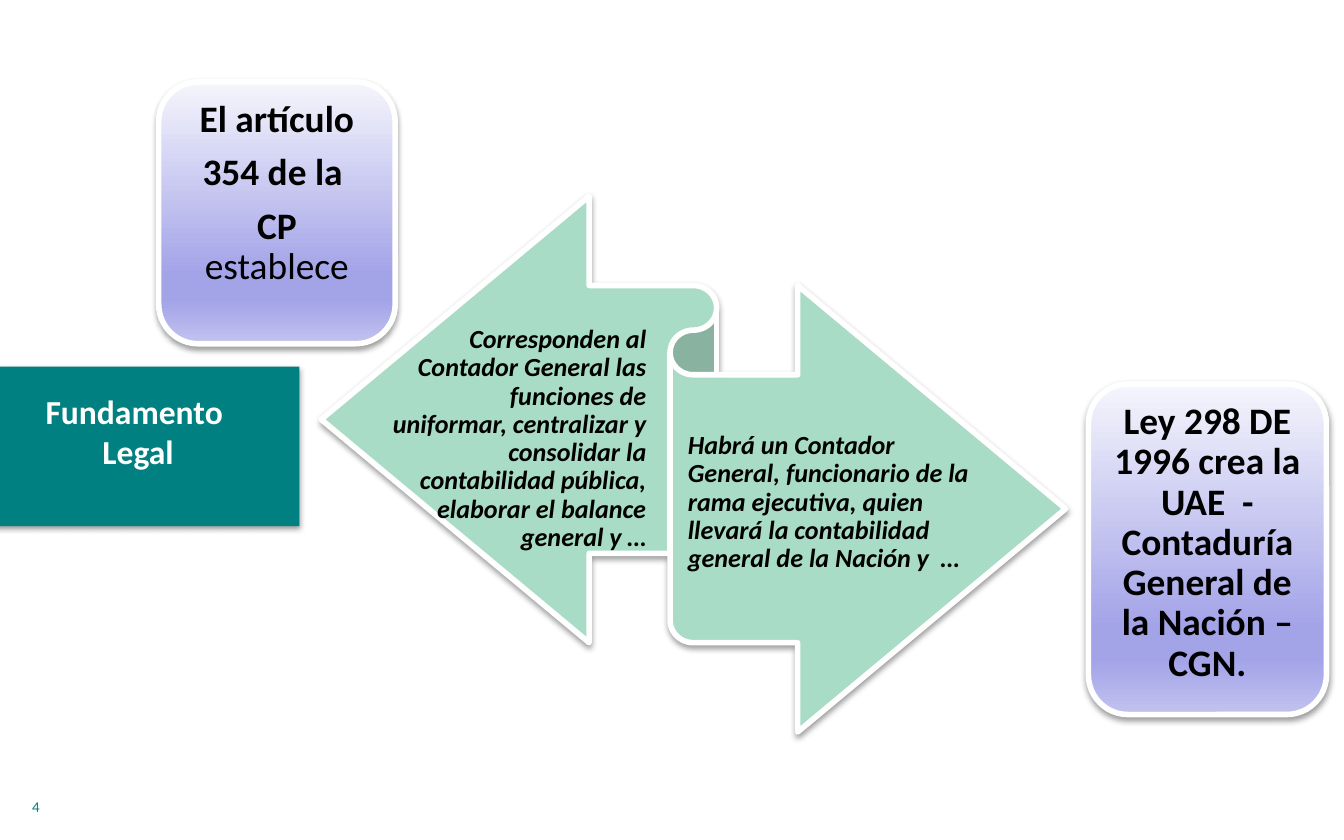
from lxml.etree import SubElement
from pptx import Presentation
from pptx.dml.color import RGBColor
from pptx.enum.shapes import MSO_SHAPE
from pptx.enum.text import MSO_ANCHOR, MSO_AUTO_SIZE, PP_ALIGN
from pptx.oxml import parse_xml
from pptx.oxml.ns import nsdecls, qn
from pptx.util import Cm, Pt

COLORS = {
    "teal": "008080", "mint": "AAE2CA", "white": "FFFFFF", "black": "000000",
    "pale": "F5F5FC", "lilac": "A3A3E8", "light": "C2C2F0",
}
STOPS = [(0, "pale"), (74, "lilac"), (83, "lilac"), (100, "light")]


def add_shadowed(shapes, kind, box, fill, outlined=True):
    sp = shapes.add_shape(kind, *map(Cm, box))
    sp.shadow.inherit = False
    sp.fill.solid()
    sp.fill.fore_color.rgb = RGBColor.from_string(COLORS[fill])
    if outlined:
        sp.line.color.rgb = RGBColor.from_string(COLORS["white"])
        sp.line.width = Pt(3)
    else:
        sp.line.fill.background()
    effects = sp._element.spPr.find(qn("a:effectLst"))
    shadow = SubElement(effects, qn("a:outerShdw"), blurRad="40000",
                        dist="20000", dir="5400000", rotWithShape="0")
    color = SubElement(shadow, qn("a:srgbClr"), val=COLORS["black"])
    SubElement(color, qn("a:alpha"), val="38000")
    return sp


def style(p, size, color, align, bold=False, italic=False):
    p.alignment = align
    p.font.name = "Calibri"
    p.font.size = Pt(size)
    p.font.bold = bold
    p.font.italic = italic
    p.font.color.rgb = RGBColor.from_string(COLORS[color])


prs = Presentation()
prs.slide_width, prs.slide_height = Cm(25.4), Cm(15.88)
s = prs.slides.add_slide(prs.slide_layouts[0])
subtitle = s.placeholders[1]._element
subtitle.getparent().remove(subtitle)

banner = add_shadowed(s.shapes, MSO_SHAPE.RECTANGLE, (-0.08, 6.93, 5.74, 3.02), "teal", False)
title = s.shapes.title
banner._element.addnext(title._element)
title.left, title.top, title.width, title.height = map(Cm, (-0.08, 7.26, 5.38, 2.49))
tf = title.text_frame
tf.text = "Fundamento \vLegal"
tf.vertical_anchor = MSO_ANCHOR.TOP
tf.auto_size = MSO_AUTO_SIZE.NONE
style(tf.paragraphs[0], 18, "white", PP_ALIGN.CENTER, bold=True)

number = s.shapes.add_textbox(Cm(0.36), Cm(14.96), Cm(5.28), Cm(0.76))
number.text_frame.word_wrap = True
number.text_frame.text = "4"
style(number.text_frame.paragraphs[0], 8, "teal", PP_ALIGN.LEFT)

cards = [
    ((20.57, 7.26, 4.5, 6.25),
     [["Ley 298 DE 1996 crea la UAE  - Contaduría General de la Nación – CGN."]]),
    ((3, 1.55, 4.47, 4.95),
     [["El artículo"], ["354 de la "], ["CP ", "establece"]]),
]
for box, paragraphs in cards:
    sp = add_shadowed(s.shapes, MSO_SHAPE.ROUNDED_RECTANGLE, box, "lilac")
    stops = "".join(
        f'<a:gs pos="{pos * 1000}"><a:srgbClr val="{COLORS[name]}"/></a:gs>'
        for pos, name in STOPS)
    solid = sp._element.spPr.find(qn("a:solidFill"))
    solid.getparent().replace(solid, parse_xml(
        f'<a:gradFill {nsdecls("a")} rotWithShape="1"><a:gsLst>{stops}</a:gsLst>'
        '<a:lin ang="5400000" scaled="0"/></a:gradFill>'))
    tf = sp.text_frame
    tf.word_wrap = True
    tf.vertical_anchor = MSO_ANCHOR.TOP
    for i, runs in enumerate(paragraphs):
        p = tf.add_paragraph() if i else tf.paragraphs[0]
        p.line_spacing = 0.9
        p.space_after = Pt(7)
        style(p, 20, "black", PP_ALIGN.CENTER)
        for j, text in enumerate(runs):
            r = p.add_run()
            r.text = text
            r.font.bold = j == 0

group = s.shapes.add_group_shape()
ribbon = add_shadowed(group.shapes, MSO_SHAPE.LEFT_RIGHT_RIBBON, (6.07, 3.71, 14.07, 10.13), "mint")
mint = ribbon._element.spPr.find(qn("a:solidFill"))[0]
SubElement(mint, qn("a:alpha"), val="90000")

duties = [
    ((7.37, 6.1, 4.85, 4.42), PP_ALIGN.RIGHT,
     "Corresponden al Contador General las funciones de uniformar, centralizar y "
     "consolidar la contabilidad pública, elaborar el balance general y …"),
    ((13, 8.13, 5.49, 2.77), PP_ALIGN.LEFT,
     "Habrá un Contador General, funcionario de la rama ejecutiva, quien llevará "
     "la contabilidad general de la Nación y  …"),
]
for box, align, text in duties:
    tf = group.shapes.add_textbox(*map(Cm, box)).text_frame
    tf.word_wrap = True
    tf.vertical_anchor = MSO_ANCHOR.MIDDLE
    tf.margin_left = tf.margin_right = 0
    tf.margin_top, tf.margin_bottom = Cm(0.13), Cm(0.15)
    tf.text = text
    p = tf.paragraphs[0]
    p.line_spacing = 0.9
    p.space_after = Pt(4.9)
    style(p, 14, "black", align, bold=True, italic=True)

prs.save("out.pptx")
